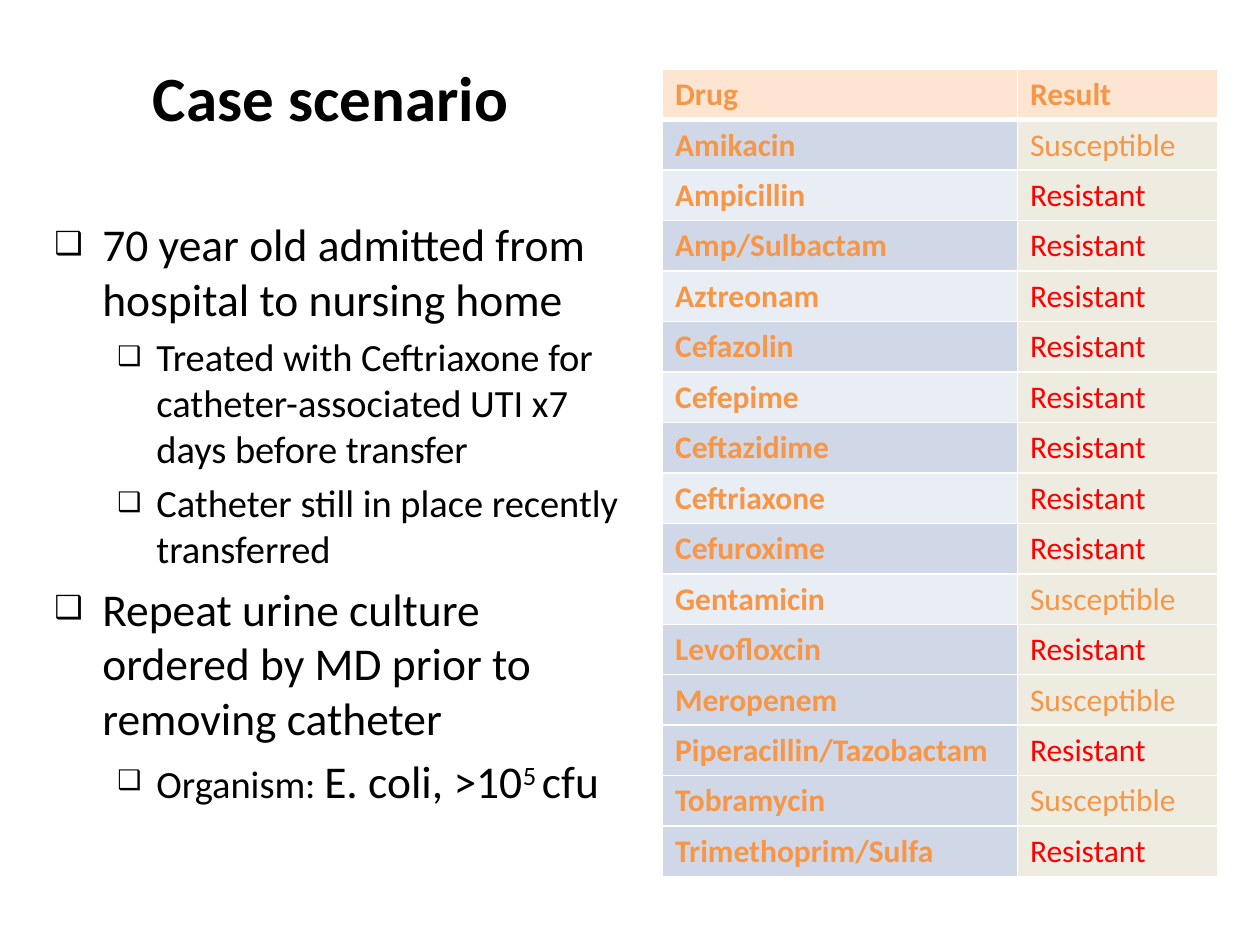
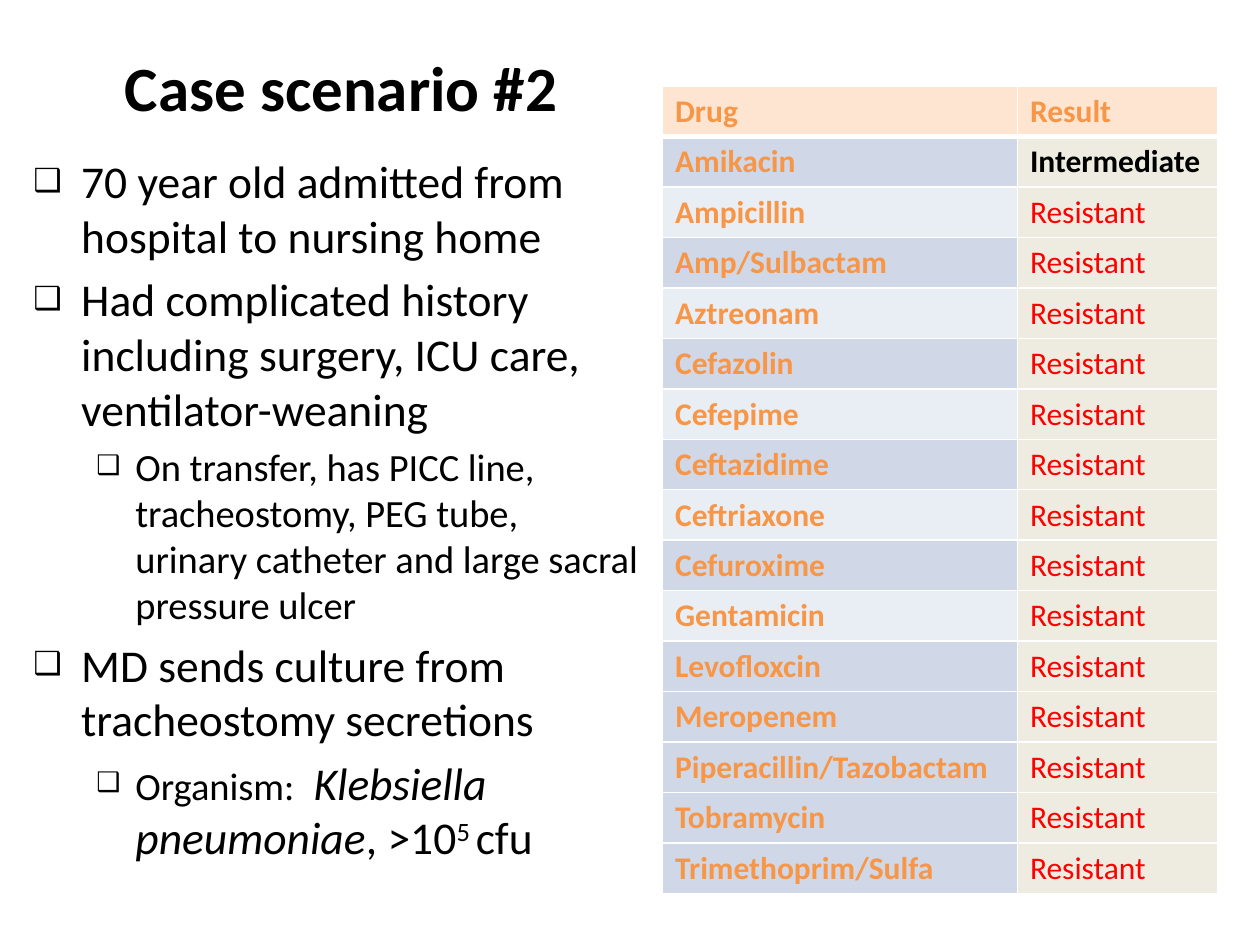
from lxml import etree
from pptx import Presentation
from pptx.dml.color import RGBColor
from pptx.enum.text import MSO_ANCHOR, PP_ALIGN
from pptx.oxml import parse_xml
from pptx.oxml.ns import nsdecls, qn
from pptx.util import Inches, Pt

CENTER = PP_ALIGN.CENTER
TOP = MSO_ANCHOR.TOP
FONT = "Calibri"
BLACK = RGBColor(0x00, 0x00, 0x00)
ORANGE = RGBColor(0xF7, 0x96, 0x46)
RED = RGBColor(0xFF, 0x00, 0x00)
HEADER = RGBColor(0xFD, 0xE5, 0xD1)
BAND_DARK = RGBColor(0xD0, 0xD8, 0xE8)
BAND_LIGHT = RGBColor(0xE9, 0xED, 0xF4)
RESULT_FILL = RGBColor(0xEE, 0xEC, 0xE1)

prs = Presentation()
prs.slide_width, prs.slide_height = Inches(10), Inches(7.5)
U = prs.slide_width / 120
COLS = (33.8, 19.1)
ROW = 4.8
TABLE_LEFT = 63.1
INDENTS = ((0.38, -0.38), (0.81, -0.31))
SIZES = (26, 22)

DRUGS = ["Amikacin", "Ampicillin", "Amp/Sulbactam", "Aztreonam", "Cefazolin",
         "Cefepime", "Ceftazidime", "Ceftriaxone", "Cefuroxime", "Gentamicin",
         "Levofloxcin", "Meropenem", "Piperacillin/Tazobactam", "Tobramycin",
         "Trimethoprim/Sulfa"]
LIGHT_ROWS = (2, 4, 6, 8, 10)
RESULT_STYLE = {"Susceptible": (ORANGE, False), "Resistant": (RED, False),
                "Intermediate": (BLACK, True)}
BIG = {"size": 26}
COUNT = [("5 ", {"size": 26, "base": 30}), ("cfu", BIG)]

CASES = [
    {"title": "Case scenario", "title_at": (5, 5, 53, 15),
     "body_at": (4, 20, 57, 62), "table_top": 6.6,
     "results": {d: "Susceptible" for d in
                 ("Amikacin", "Gentamicin", "Meropenem", "Tobramycin")},
     "body": [
         (0, [("70 year old admitted from hospital to nursing home", {})]),
         (1, [("Treated with Ceftriaxone for catheter-associated UTI x7 days before transfer", {})]),
         (1, [("Catheter still in place recently transferred", {})]),
         (0, [("Repeat urine culture ordered by MD prior to removing catheter", {})]),
         (1, [("Organism: ", {}), ("E. coli, >10", BIG)] + COUNT)]},
    {"title": "Case scenario #2", "title_at": (6, 4, 53, 15),
     "body_at": (2, 14, 60, 70), "table_top": 8.2,
     "results": {"Amikacin": "Intermediate"},
     "body": [
         (0, [("70 year old admitted from hospital to nursing home", {})]),
         (0, [("Had complicated history including surgery, ICU care, ventilator-weaning", {})]),
         (1, [("On transfer, has PICC line, tracheostomy, PEG tube, urinary catheter and large sacral pressure ulcer", {})]),
         (0, [("MD sends culture from tracheostomy secretions", {})]),
         (1, [("Organism: ", {}), (" ", BIG),
              ("Klebsiella pneumoniae", {"size": 26, "italic": True}),
              (", >10", BIG)] + COUNT)]},
]


def add_text(p, text, size=18, color=BLACK, bold=False, italic=False, base=0):
    r = p.add_run()
    r.text = text
    r.font.name, r.font.size = FONT, Pt(size)
    r.font.bold, r.font.italic = bold, italic
    r.font.color.rgb = color
    if base:
        r.font._element.set("baseline", str(base * 1000))


def add_space(p):
    pPr = p._p.get_or_add_pPr()
    spc = etree.SubElement(pPr, qn("a:spcBef"))
    etree.SubElement(spc, qn("a:spcPct")).set("val", "20000")
    return pPr


for case in CASES:
    s = prs.slides.add_slide(prs.slide_layouts[6])

    frames = []
    for at in (case["title_at"], case["body_at"]):
        tf = s.shapes.add_textbox(*(int(v * U) for v in at)).text_frame
        tf.word_wrap = True
        tf.vertical_anchor = TOP
        frames.append(tf)
    title, body = frames
    title.paragraphs[0].alignment = CENTER
    add_text(title.paragraphs[0], case["title"], size=36, bold=True)

    for i, (level, runs) in enumerate(case["body"]):
        p = body.add_paragraph() if i else body.paragraphs[0]
        p.level = level
        pPr = add_space(p)
        margin, indent = INDENTS[level]
        pPr.set("marL", str(Inches(margin)))
        pPr.set("indent", str(Inches(indent)))
        clr = etree.SubElement(pPr, qn("a:buClr"))
        etree.SubElement(clr, qn("a:srgbClr")).set("val", str(BLACK))
        etree.SubElement(pPr, qn("a:buSzPct")).set("val", "70000")
        etree.SubElement(pPr, qn("a:buFont")).set("typeface", FONT)
        etree.SubElement(pPr, qn("a:buChar")).set("char", "❑")
        for text, style in runs:
            add_text(p, text, **{"size": SIZES[level], **style})

    rows = [("Drug", "Result")]
    rows += [(d, case["results"].get(d, "Resistant")) for d in DRUGS]
    table = s.shapes.add_table(
        len(rows), len(COLS), int(TABLE_LEFT * U), int(case["table_top"] * U),
        int(sum(COLS) * U), int(len(rows) * ROW * U)).table
    for c, width in enumerate(COLS):
        table.columns[c].width = int(width * U)
    for n, row in enumerate(rows):
        table.rows[n].height = int(ROW * U)
        for c, text in enumerate(row):
            cell = table.cell(n, c)
            color, bold = RESULT_STYLE.get(text, (ORANGE, True))
            p = cell.text_frame.paragraphs[0]
            add_space(p)
            add_text(p, text, color=color, bold=bold)
            tcPr = cell._tc.get_or_add_tcPr()
            for side in "LRTB":
                thick = (n, side) in ((0, "B"), (1, "T"))
                tcPr.append(parse_xml(
                    f'<a:ln{side} {nsdecls("a")} w="{Pt(3 if thick else 1)}"><a:solidFill>'
                    f'<a:srgbClr val="FFFFFF"/></a:solidFill></a:ln{side}>'))
            cell.fill.solid()
            if n == 0:
                cell.fill.fore_color.rgb = HEADER
            elif c == 1:
                cell.fill.fore_color.rgb = RESULT_FILL
            else:
                cell.fill.fore_color.rgb = BAND_LIGHT if n in LIGHT_ROWS else BAND_DARK

prs.save("out.pptx")
